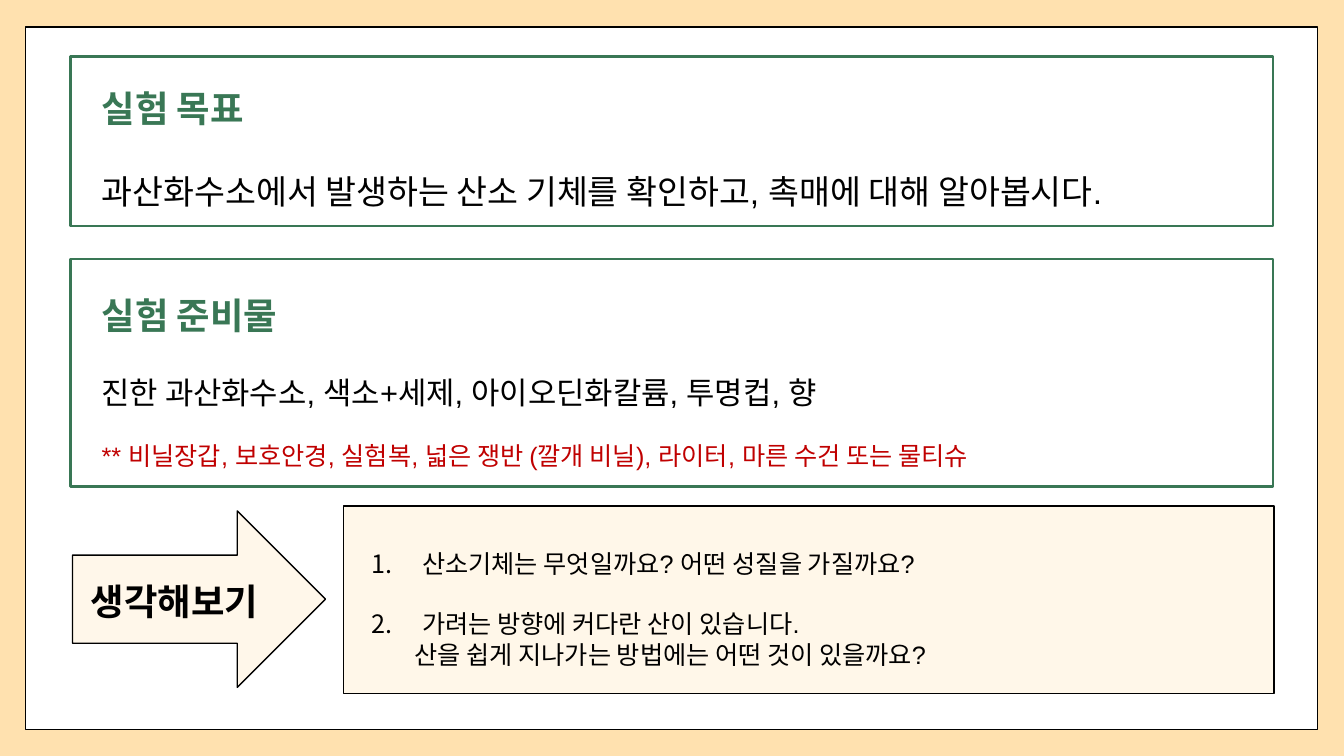
from lxml import etree
from pptx import Presentation
from pptx.dml.color import RGBColor
from pptx.enum.shapes import MSO_SHAPE as SHAPE
from pptx.enum.text import MSO_ANCHOR, PP_ALIGN
from pptx.oxml.ns import qn
from pptx.util import Pt

SAND = RGBColor(0xFF, 0xE1, 0xAF)
CREAM = RGBColor(0xFF, 0xEC, 0xCC)
WHITE = RGBColor(0xFF, 0xFF, 0xFF)
BLACK = RGBColor(0, 0, 0)
GREEN = RGBColor(0x39, 0x77, 0x55)
RED = RGBColor(0xC0, 0, 0)

# Content: headings are (text, colour, left, top, width)
HEADINGS = [
    ("실험 목표", GREEN, 65.5, 54, 141),
    ("실험 준비물", GREEN, 65.5, 202.3, 166),
    ("생각해보기", BLACK, 57.6, 406.8, 150.5),
]
# Body lines are (text, size, colour)
GOAL = [("과산화수소에서 발생하는 산소 기체를 확인하고, 촉매에 대해 알아봅시다.", 24, BLACK)]
SUPPLIES = [
    ("진한 과산화수소, 색소+세제, 아이오딘화칼륨, 투명컵, 향", 22, BLACK),
    ("** 비닐장갑, 보호안경, 실험복, 넓은 쟁반 (깔개 비닐), 라이터, 마른 수건 또는 물티슈", 18, RED),
]
QUESTIONS = [
    ("산소기체는 무엇일까요? 어떤 성질을 가질까요?", 18, BLACK),
    ("가려는 방향에 커다란 산이 있습니다.", 18, BLACK),
]
FOLLOW_UP = ("산을 쉽게 지나가는 방법에는 어떤 것이 있을까요?", 18, BLACK)

# Panels: (shape, left, top, width, height, fill, opacity %, line colour, line width)
PANELS = [
    (SHAPE.RECTANGLE, 18, 19.4, 923, 501.8, WHITE, 100, BLACK, 1),
    (SHAPE.RECTANGLE, 50.4, 40.3, 859, 121, None, 100, GREEN, 1.75),
    (SHAPE.RECTANGLE, 50.4, 185, 859, 162.7, None, 100, GREEN, 1.75),
    (SHAPE.RIGHT_ARROW, 51.8, 365, 180.7, 126, CREAM, 40, BLACK, 1),
    (SHAPE.RECTANGLE, 245.5, 361.4, 664.5, 133.9, CREAM, 42, BLACK, 1),
]


def add_panel(s, kind, left, top, width, height, fill, opacity, line, weight):
    sp = s.shapes.add_shape(kind, Pt(left), Pt(top), Pt(width), Pt(height))
    sp.shadow.inherit = False
    if fill is None:
        sp.fill.background()
    else:
        sp.fill.solid()
        sp.fill.fore_color.rgb = fill
        if opacity < 100:
            clr = sp.fill._xPr.find(qn("a:solidFill"))[0]
            etree.SubElement(clr, qn("a:alpha")).set("val", str(opacity * 1000))
    sp.line.color.rgb = line
    sp.line.width = Pt(weight)


def add_box(s, left, top, width, height):
    tf = s.shapes.add_textbox(Pt(left), Pt(top), Pt(width), Pt(height)).text_frame
    tf.word_wrap = True
    tf.vertical_anchor = MSO_ANCHOR.TOP
    return tf


def add_line(tf, text, size, color, font="Arial", bold=False, spacing=2):
    p = tf.paragraphs[0]
    if p.runs:
        p = tf.add_paragraph()
    p.alignment = PP_ALIGN.LEFT
    p.line_spacing = spacing
    r = p.add_run()
    r.text = text
    r.font.name = font
    r.font.size = Pt(size)
    r.font.bold = bold
    r.font.color.rgb = color
    return p


def indent(p, left, first=0):
    pPr = p._p.get_or_add_pPr()
    pPr.set("marL", str(Pt(left)))
    pPr.set("indent", str(Pt(first)))
    return pPr


def main():
    prs = Presentation()
    prs.slide_width, prs.slide_height = Pt(960), Pt(540)
    s = prs.slides.add_slide(prs.slide_layouts[6])
    s.background.fill.solid()
    s.background.fill.fore_color.rgb = SAND

    # Frame, section boxes and arrow
    for panel in PANELS:
        add_panel(s, *panel)

    # Headings
    for text, color, left, top, width in HEADINGS:
        tf = add_box(s, left, top, width, 34.6)
        tf.margin_left = tf.margin_right = tf.margin_top = tf.margin_bottom = Pt(7.2)
        add_line(tf, text, 26, color, "Calibri", True, 1)

    # Goal and supplies
    for lines, top, width, height in [(GOAL, 90, 807, 65.5), (SUPPLIES, 236.9, 830, 105)]:
        tf = add_box(s, 65.5, top, width, height)
        for line in lines:
            add_line(tf, *line)

    # Numbered questions, the last with a follow-up line
    tf = add_box(s, 258.5, 366.5, 508.3, 116.6)
    for line in QUESTIONS:
        pPr = indent(add_line(tf, *line), 36, -36)
        etree.SubElement(pPr, qn("a:buFont")).set("typeface", "Arial")
        etree.SubElement(pPr, qn("a:buAutoNum")).set("type", "arabicPeriod")
    indent(add_line(tf, *FOLLOW_UP, spacing=1), 30.5)

    prs.save("out.pptx")


if __name__ == "__main__":
    main()
